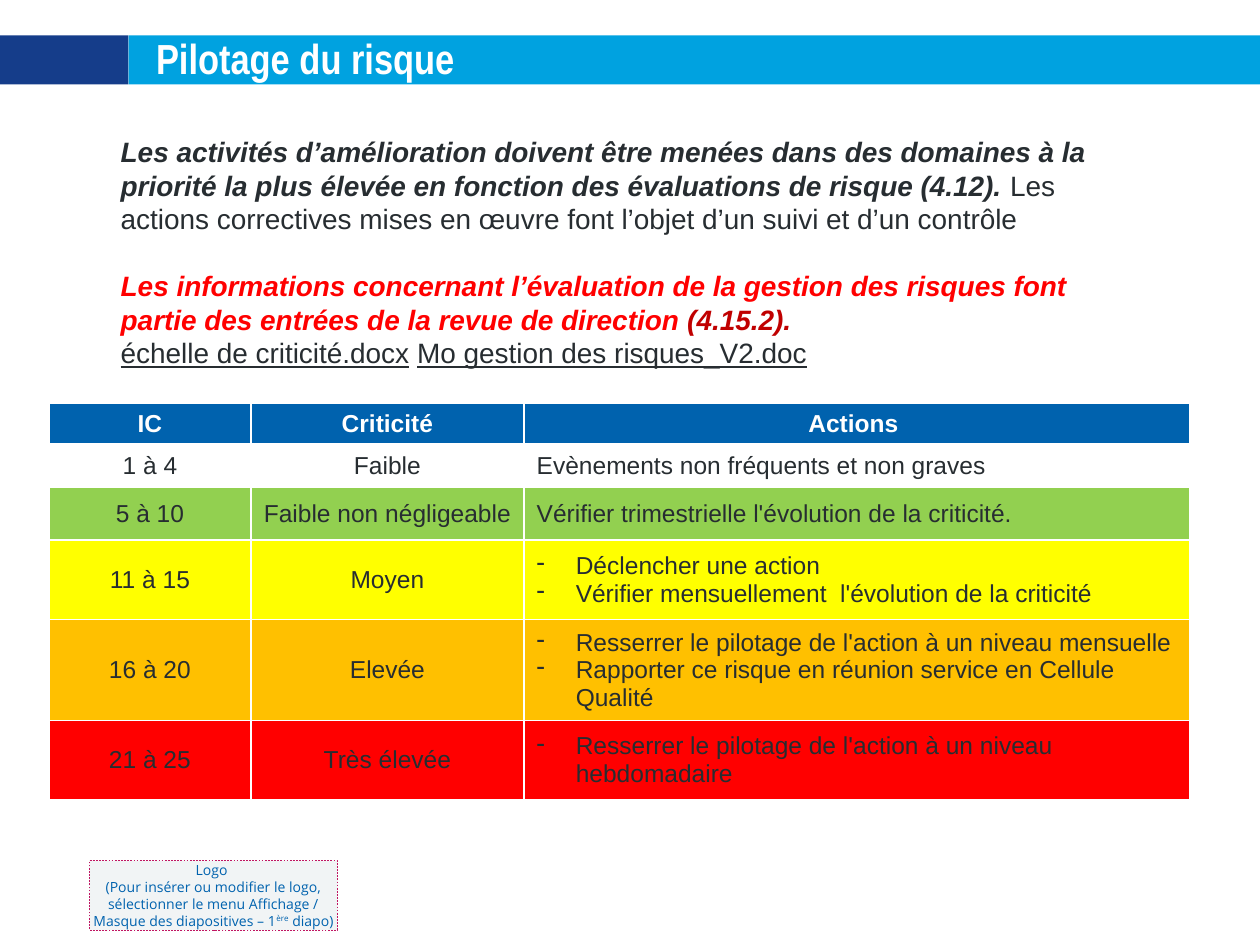
from lxml import etree
from pptx import Presentation
from pptx import util as u
from pptx.dml.color import RGBColor
from pptx.enum import dml, shapes, text
from pptx.oxml import ns

INK, WHITE, BLUE = "272D31", "FFFFFF", "0062AE"
CENTER, LEFT = text.PP_ALIGN.CENTER, text.PP_ALIGN.LEFT
TITLE = "Pilotage du risque"
STRONG = {"bold": True, "italic": True}
INTRO = [
    [("Les activités d’amélioration doivent être menées dans des domaines à la priorité "
      "la plus élevée en fonction des évaluations de risque (4.12).", INK, STRONG),
     (" Les actions correctives mises en œuvre font l’objet d’un suivi et d’un contrôle", INK, {})],
    [("Les informations concernant l’évaluation de la gestion des risques font partie "
      "des entrées de la revue de direction ", "FF0000", STRONG),
     ("(4.15.2).", "C00000", STRONG)],
    [("échelle de criticité.docx", INK, {"underline": True}),
     (" ", INK, {}),
     ("Mo gestion des risques_V2.doc", INK, {"underline": True})],
]
LOGO_NOTE = [
    [("Logo ", 0)],
    [("(Pour insérer ou modifier le logo, sélectionner le menu Affichage / "
      "Masque des diapositives – 1", 0), ("ère", 30000), (" diapo)", 0)],
]
HEADER = ("IC", "Criticité", "Actions ")
LEVELS = [
    ("1 à 4", "Faible", "Evènements non fréquents et non graves", WHITE, 0.33),
    ("5 à 10", "Faible non négligeable",
     "Vérifier trimestrielle l'évolution de la criticité.", "92D050", 0.42),
    ("11 à 15", "Moyen",
     ["Déclencher une action", "Vérifier mensuellement  l'évolution de la criticité"],
     "FFFF00", 0.63),
    ("16 à 20", "Elevée",
     ["Resserrer le pilotage de l'action à un niveau mensuelle",
      "Rapporter ce risque en réunion service en Cellule Qualité"], "FFC000", 0.8),
    ("21 à 25", "Très élevée",
     ["Resserrer le pilotage de l'action à un niveau hebdomadaire"], "FF0000", 0.63),
]
COLUMNS = (1.6, 2.17, 5.28)


def rgb(value):
    return RGBColor.from_string(value)


def inches(*values):
    return [u.Inches(value) for value in values]


def add_span(para, words, size, color, face="Arial", **style):
    span = para.add_run()
    span.text = words
    span.font.name, span.font.size = face, u.Pt(size)
    span.font.color.rgb = rgb(color)
    for name, value in style.items():
        setattr(span.font, name, value)
    return span


def paragraphs(frame, count):
    return [frame.paragraphs[0]] + [frame.add_paragraph() for _ in range(count - 1)]


def add_bar(page, place, color):
    bar = page.shapes.add_shape(shapes.MSO_SHAPE.RECTANGLE, *inches(*place))
    bar.shadow.inherit = False
    bar.fill.solid()
    bar.fill.fore_color.rgb = rgb(color)
    bar.line.fill.background()
    return bar


def add_text(page, place):
    frame = page.shapes.add_textbox(*inches(*place)).text_frame
    frame.word_wrap = True
    return frame


def add_logo_note(page):
    note = add_bar(page, (0.71, 6.83, 1.97, 0.55), "F1F4F5")
    note.line.color.rgb = rgb("C01662")
    note.line.width = u.Pt(0.25)
    note.line.dash_style = dml.MSO_LINE.DASH
    frame = note.text_frame
    frame.word_wrap = True
    frame.vertical_anchor = text.MSO_ANCHOR.MIDDLE
    frame.margin_left = frame.margin_right = 0
    frame.margin_top = frame.margin_bottom = u.Inches(0.04)
    for para, spans in zip(paragraphs(frame, len(LOGO_NOTE)), LOGO_NOTE):
        para.alignment = CENTER
        for words, raised in spans:
            span = add_span(para, words, 8, BLUE, "Open Sans")
            if raised:
                span.font._element.set("baseline", str(raised))


def add_dash(para):
    props = para._p.get_or_add_pPr()
    props.set("marL", str(u.Inches(0.31)))
    props.set("indent", str(-u.Inches(0.31)))
    etree.SubElement(props, ns.qn("a:buChar")).set("char", "-")


def add_borders(cell, bottom):
    props = cell._tc.get_or_add_tcPr()
    sides = (("L", 1), ("R", 1), ("T", 1), ("B", bottom))
    for position, (side, width) in enumerate(sides):
        line = etree.Element(ns.qn("a:ln" + side), w=str(u.Pt(width)))
        fill = etree.SubElement(line, ns.qn("a:solidFill"))
        etree.SubElement(fill, ns.qn("a:srgbClr")).set("val", WHITE)
        props.insert(position, line)


def fill_cell(cell, content, fill, color, align, bold=False, bottom=1):
    cell.fill.solid()
    cell.fill.fore_color.rgb = rgb(fill)
    cell.vertical_anchor = text.MSO_ANCHOR.MIDDLE
    add_borders(cell, bottom)
    dashed = isinstance(content, list)
    items = content if dashed else [content]
    for para, words in zip(paragraphs(cell.text_frame, len(items)), items):
        para.alignment = align
        if dashed:
            add_dash(para)
        add_span(para, words, 14, color, bold=bold)


def add_levels(page):
    heights = [0.33] + [level[-1] for level in LEVELS]
    table = page.shapes.add_table(
        len(heights), len(COLUMNS), *inches(0.39, 3.2, sum(COLUMNS), sum(heights))).table
    for column, width in zip(table.columns, COLUMNS):
        column.width = u.Inches(width)
    for row, height in zip(table.rows, heights):
        row.height = u.Inches(height)
    for cell, words in zip(table.rows[0].cells, HEADER):
        fill_cell(cell, words, BLUE, WHITE, CENTER, bold=True, bottom=3)
    for number, (*contents, fill, _) in enumerate(LEVELS, 1):
        for cell, content, align in zip(table.rows[number].cells, contents, (CENTER, CENTER, LEFT)):
            fill_cell(cell, content, fill, INK, align)


def main():
    deck = Presentation()
    deck.slide_width, deck.slide_height = inches(10, 7.5)
    page = deck.slides.add_slide(deck.slide_layouts[6])
    add_bar(page, (0, 0.28, 1.02, 0.39), "153D8A")
    add_bar(page, (1.02, 0.28, 8.98, 0.39), "00A2E0")
    add_logo_note(page)
    title = add_text(page, (1.14, 0.21, 5.2, 0.51))
    add_span(title.paragraphs[0], TITLE, 24, WHITE, "Arial Narrow", bold=True)
    intro = add_text(page, (0.86, 1.02, 8.27, 1.99))
    for para, spans in zip(paragraphs(intro, len(INTRO)), INTRO):
        for words, color, style in spans:
            add_span(para, words, 16, color, **style)
    intro.paragraphs[1].space_before = u.Pt(19)
    add_levels(page)
    deck.save("out.pptx")


if __name__ == "__main__":
    main()
